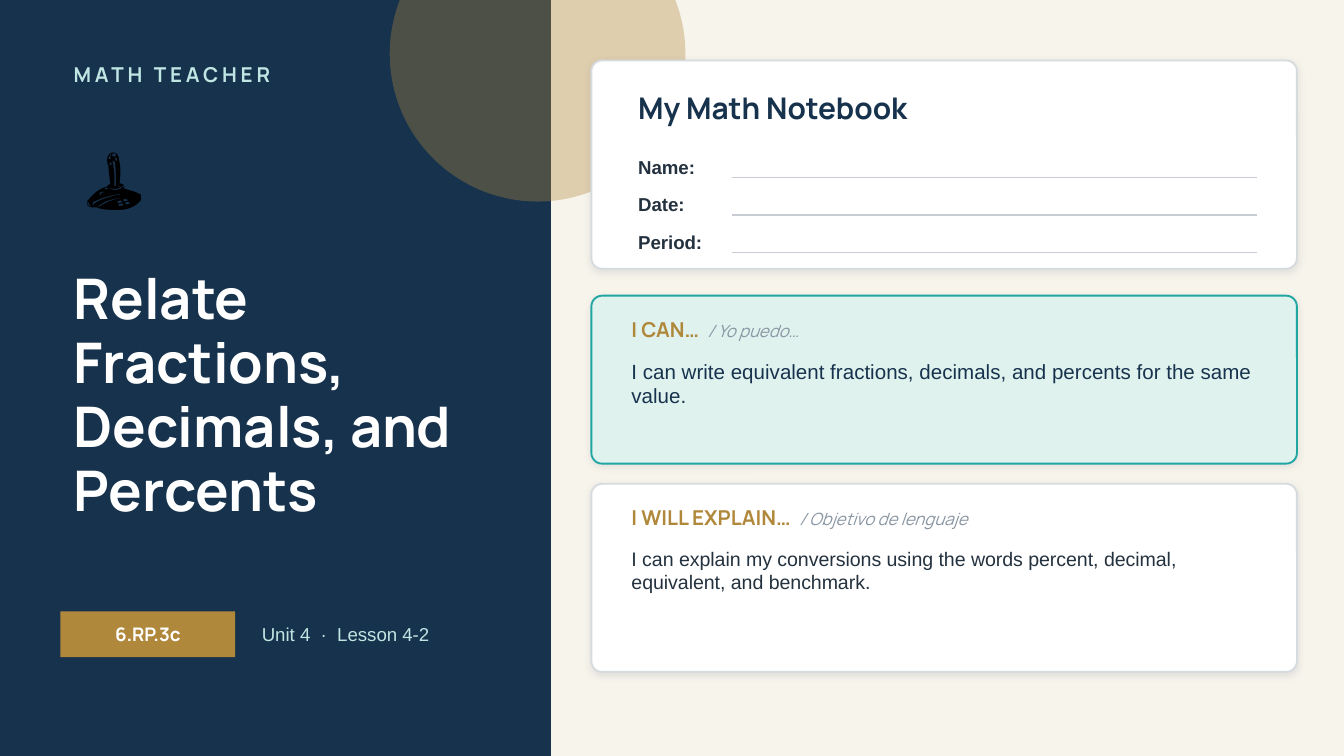
from lxml.etree import SubElement
from pptx import Presentation
from pptx.dml.color import RGBColor
from pptx.enum.shapes import MSO_CONNECTOR, MSO_SHAPE
from pptx.enum.text import MSO_ANCHOR, PP_ALIGN
from pptx.oxml.ns import qn
from pptx.util import Inches, Pt

NAVY = RGBColor(0x17, 0x32, 0x4D)
GOLD = RGBColor(0xB0, 0x88, 0x3B)
CREAM = RGBColor(0xF7, 0xF4, 0xEC)
WHITE = RGBColor(0xFF, 0xFF, 0xFF)
BLACK = RGBColor(0, 0, 0)
AQUA = RGBColor(0xBF, 0xE6, 0xE2)
MINT = RGBColor(0xDF, 0xF2, 0xEE)
TEAL = RGBColor(0x1F, 0xA6, 0xA2)
INK = RGBColor(0x24, 0x32, 0x3F)
GREY = RGBColor(0x8A, 0x96, 0xA3)
EDGE = RGBColor(0xD6, 0xDB, 0xDF)
RULE = RGBColor(0xC7, 0xCD, 0xD2)
SHADE = RGBColor(0x1C, 0x2E, 0x42)


def style(size, color, name="Manrope", bold=False, italic=False):
    return {"size": Pt(size), "color": color, "name": name,
            "bold": bold, "italic": italic}


BRAND = style(11, AQUA, bold=True)
ICON = style(44, BLACK, "Calibri")
TITLE = style(30, WHITE, bold=True)
CODE = style(10, WHITE, bold=True)
UNIT = style(10, AQUA, "Arial")
HEAD = style(16, NAVY, bold=True)
LABEL = style(10, INK, "Arial", bold=True)
GOAL = style(11, GOLD, bold=True)
SPANISH = style(9, GREY, italic=True)

FIELDS = ["Name:", "Date:", "Period:"]
GOALS = [
    {"top": 2.2, "height": 1.25, "fill": MINT, "edge": TEAL,
     "head": "I CAN…  ", "spanish": "/ Yo puedo…",
     "body": "I can write equivalent fractions, decimals, and percents "
             "for the same value.",
     "style": style(11, NAVY, "Arial")},
    {"top": 3.6, "height": 1.4, "fill": WHITE, "edge": EDGE,
     "head": "I WILL EXPLAIN…  ", "spanish": "/ Objetivo de lenguaje",
     "body": "I can explain my conversions using the words percent, "
             "decimal, equivalent, and benchmark.",
     "style": style(10.5, INK, "Arial")},
]
WIDTH = 10
HEIGHT = WIDTH * 9 / 16
LEFT, WIDE = 4.4, 5.25   # cards
RADIUS = 0.08
STEP = 0.28              # between notebook fields

deck = Presentation()
deck.slide_width, deck.slide_height = Inches(WIDTH), Inches(HEIGHT)
slide = deck.slides.add_slide(deck.slide_layouts[6])
slide.background.fill.solid()
slide.background.fill.fore_color.rgb = CREAM


def write(frame, runs, anchor=MSO_ANCHOR.MIDDLE):
    """Fill the first paragraph with (text, style) runs and return it."""
    frame.word_wrap = True
    frame.vertical_anchor = anchor
    para = frame.paragraphs[0]
    for text, form in runs:
        run = para.add_run()
        run.text = text
        for key, value in form.items():
            if key == "color":
                run.font.color.rgb = value
            else:
                setattr(run.font, key, value)
    return para


def label(box, *runs, anchor=MSO_ANCHOR.MIDDLE):
    area = slide.shapes.add_textbox(*map(Inches, box))
    return write(area.text_frame, runs, anchor)


def block(kind, box, fill, edge=None):
    shape = slide.shapes.add_shape(kind, *map(Inches, box))
    shape.shadow.inherit = False
    shape.fill.solid()
    shape.fill.fore_color.rgb = fill
    if edge is None:
        shape.line.fill.background()
    else:
        shape.line.color.rgb = edge
        shape.line.width = Pt(1)
    return shape


def fade(node, percent):
    SubElement(node, qn("a:alpha"), val=str(percent * 1000))


def card(top, height, fill, edge):
    """Draw a rounded card with a soft shadow below it."""
    shape = block(MSO_SHAPE.ROUNDED_RECTANGLE, (LEFT, top, WIDE, height),
                  fill, edge)
    shape.adjustments[0] = RADIUS / height
    effects = shape._element.spPr.find(qn("a:effectLst"))
    shadow = SubElement(effects, qn("a:outerShdw"), blurRad=str(Pt(4)),
                        dist=str(Pt(1)), dir="5400000", algn="bl",
                        rotWithShape="0")
    fade(SubElement(shadow, qn("a:srgbClr"), val=str(SHADE)), 10)


def rule(y):
    line = slide.shapes.add_connector(
        MSO_CONNECTOR.STRAIGHT, *map(Inches, (5.45, y, 9.35, y)))
    line.line.color.rgb = RULE
    line.line.width = Pt(0.75)
    SubElement(line._element.spPr, qn("a:effectLst"))


# Cover panel
block(MSO_SHAPE.RECTANGLE, (0, 0, 4.1, HEIGHT), NAVY)
disc = block(MSO_SHAPE.OVAL, (2.9, -0.7, 2.2, 2.2), GOLD)
fade(disc._element.spPr.find(".//" + qn("a:srgbClr")), 35)
brand = label((0.45, 0.4, 3.3, 0.3), ("MATH TEACHER", BRAND))
brand.runs[0]._r.get_or_add_rPr().set("spc", "200")
label((0.45, 0.85, 1.5, 0.9), ("🕹️", ICON))
title = label((0.45, 1.95, 3.3, 1.7),
              ("Relate Fractions, Decimals, and Percents", TITLE),
              anchor=MSO_ANCHOR.TOP)
title.line_spacing = 0.95
badge = block(MSO_SHAPE.RECTANGLE, (0.45, 4.55, 1.3, 0.34), GOLD)
write(badge.text_frame, [("6.RP.3c", CODE)]).alignment = PP_ALIGN.CENTER
label((1.85, 4.55, 2.1, 0.34), ("Unit 4  ·  Lesson 4-2", UNIT))

# Notebook card
card(0.45, 1.55, WHITE, EDGE)
label((4.65, 0.6, 4.8, 0.4), ("My Math Notebook", HEAD))
for i, field in enumerate(FIELDS):
    y = 1.12 + i * STEP
    label((4.65, y, 0.8, 0.24), (field, LABEL))
    rule(y + 0.2)

# Goal cards
for goal in GOALS:
    top, height = goal["top"], goal["height"]
    card(top, height, goal["fill"], goal["edge"])
    label((LEFT + 0.2, top + 0.1, WIDE - 0.4, 0.3),
          (goal["head"], GOAL), (goal["spanish"], SPANISH))
    label((LEFT + 0.2, top + 0.42, WIDE - 0.4, height - 0.47),
          (goal["body"], goal["style"]), anchor=MSO_ANCHOR.TOP)

deck.save("out.pptx")
